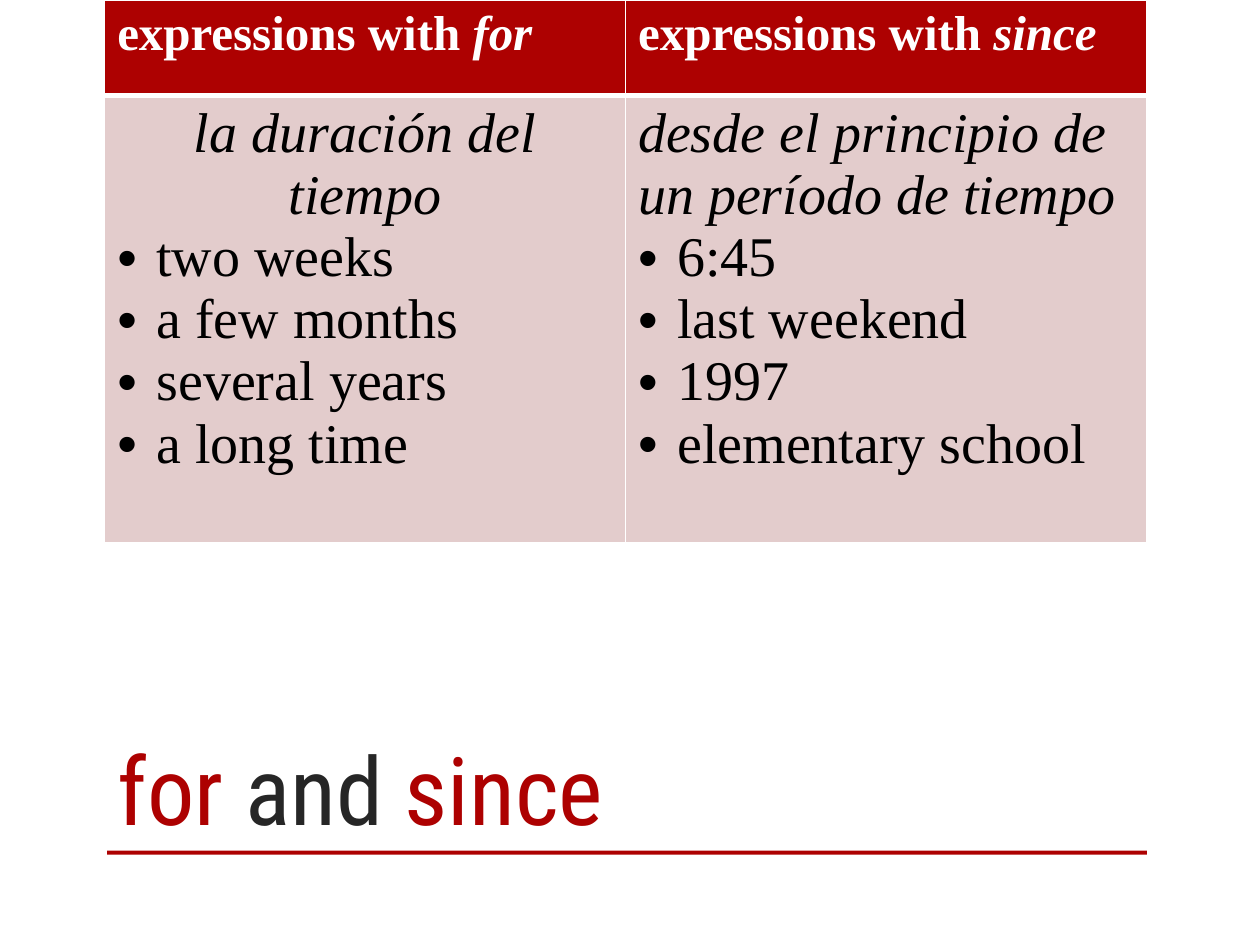
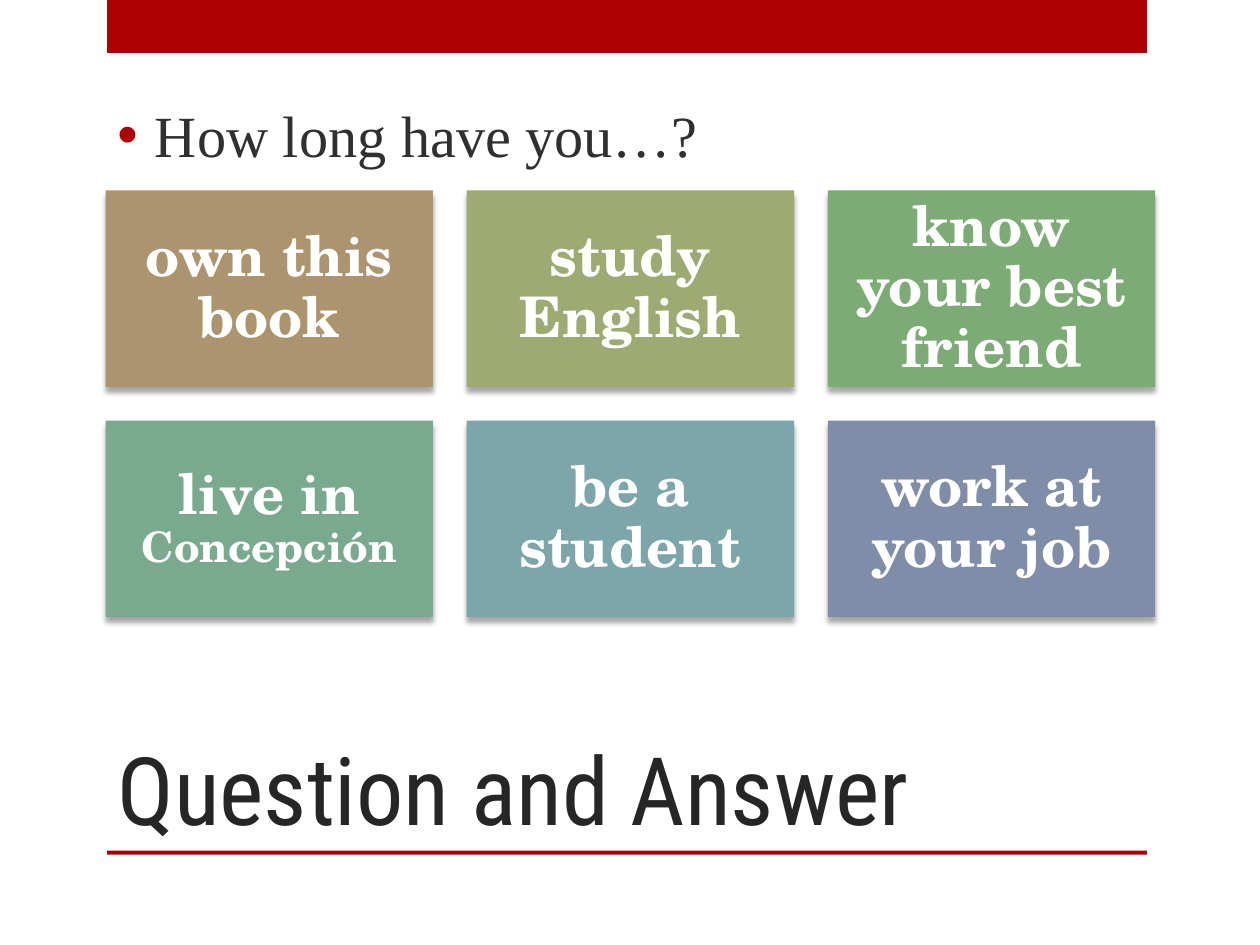
"""Builds two English grammar slides: a for/since table and a question card grid."""
from dataclasses import dataclass
from typing import Any, Optional

import pptx
import pptx.dml.color
import pptx.enum.shapes
import pptx.enum.text
import pptx.oxml
import pptx.oxml.ns
import pptx.util
from lxml import etree

Cm = pptx.util.Cm
Pt = pptx.util.Pt
qn = pptx.oxml.ns.qn
ALIGN = pptx.enum.text.PP_ALIGN
ANCHOR = pptx.enum.text.MSO_ANCHOR


@dataclass(frozen=True)
class Theme:
    accent: str = "AD0101"
    title: str = "262626"
    body: str = "303030"
    white: str = "FFFFFF"
    black: str = "000000"
    pale: str = "E3CCCC"
    title_font: str = "Roboto Condensed"
    body_font: str = "Times New Roman"
    card_font: str = "TeX Gyre Schola"
    title_size: float = 54
    header_size: float = 28
    cell_size: float = 32
    prompt_size: float = 33.3
    card_size: float = 32
    card_small: float = 24


T = Theme()


@dataclass(frozen=True)
class Box:
    x: float
    y: float
    w: float
    h: float

    def place(self) -> dict[str, int]:
        return dict(left=Cm(self.x), top=Cm(self.y), width=Cm(self.w), height=Cm(self.h))


@dataclass(frozen=True)
class Run:
    text: str
    color: Optional[str] = None
    size: Optional[float] = None
    italic: bool = False


@dataclass(frozen=True)
class Column:
    word: str
    meaning: str
    meaning_align: Any
    examples: tuple[str, ...]


@dataclass(frozen=True)
class Card:
    fill: str
    runs: tuple[Run, ...]


BANDS = (Box(2.16, 0, 20.96, 1.07), Box(2.16, 17.15, 20.96, 0.08))
TITLE = Box(2.11, 12.7, 18.85, 4.45)
PROMPT = Box(2.11, 1.9, 20.96, 1.63)
TABLE = Box(2.11, 0, 21, 10.95)
HEADER_H = 1.93
CARD = Box(2.13, 3.84, 6.6, 3.96)
CARD_GAP = 0.68
CARDS_PER_ROW = 3

COLUMNS = (
    Column("for", "la duración del tiempo", ALIGN.CENTER,
           ("two weeks", "a few months", "several years", "a long time")),
    Column("since", "desde el principio de un período de tiempo", ALIGN.LEFT,
           ("6:45", "last weekend", "1997", "elementary school")),
)
CARDS = (
    Card("AC956E", (Run("own this book"),)),
    Card("9DAB72", (Run("study English"),)),
    Card("7DAB75", (Run("know your best friend"),)),
    Card("79AA90", (Run("live in "), Run("Concepción", size=T.card_small))),
    Card("7CA6AA", (Run("be a student"),)),
    Card("808DA9", (Run("work at your job"),)),
)


def rgb(color: str) -> pptx.dml.color.RGBColor:
    """Turn a hex string into a colour."""
    return pptx.dml.color.RGBColor.from_string(color)


def apply(target: Any, values: dict[str, Any]) -> None:
    """Set every attribute named in the dict."""
    for name, value in values.items():
        setattr(target, name, value)


def write(p: Any, runs: tuple[Run, ...], font: str, size: float, color: str,
          bold: bool = False, align: Any = ALIGN.LEFT) -> None:
    """Fill a paragraph with formatted runs."""
    p.alignment = align
    for run in runs:
        r = p.add_run()
        r.text = run.text
        apply(r.font, dict(name=font, size=Pt(run.size or size), bold=bold, italic=run.italic))
        r.font.color.rgb = rgb(run.color or color)


def bullet(p: Any, indent: float, color: str) -> None:
    """Give a paragraph a hanging round bullet."""
    pPr = p._p.get_or_add_pPr()
    pPr.set("marL", str(Cm(indent)))
    pPr.set("indent", str(-Cm(indent)))
    clr = etree.SubElement(pPr, qn("a:buClr"))
    etree.SubElement(clr, qn("a:srgbClr"), val=color)
    etree.SubElement(pPr, qn("a:buFont"), typeface="Arial")
    etree.SubElement(pPr, qn("a:buChar"), char="•")


def rectangle(s: Any, box: Box, color: str) -> Any:
    """Draw a plain filled rectangle."""
    sp = s.shapes.add_shape(pptx.enum.shapes.MSO_SHAPE.RECTANGLE, **box.place())
    sp.shadow.inherit = False
    sp.fill.solid()
    sp.fill.fore_color.rgb = rgb(color)
    sp.line.fill.background()
    return sp


def placeholder(sp: Any, box: Box, anchor: Any) -> Any:
    """Move a placeholder and return its first paragraph."""
    apply(sp, box.place())
    apply(sp.text_frame, dict(word_wrap=True, vertical_anchor=anchor,
                              auto_size=pptx.enum.text.MSO_AUTO_SIZE.NONE))
    return sp.text_frame.paragraphs[0]


def new_slide(prs: Any, layout: int, title: tuple[Run, ...]) -> Any:
    """Add a slide with the shared bands and title."""
    s = prs.slides.add_slide(prs.slide_layouts[layout])
    for band in BANDS:
        rectangle(s, band, T.accent)
    p = placeholder(s.shapes.title, TITLE, ANCHOR.BOTTOM)
    write(p, title, T.title_font, T.title_size, T.title)
    return s


def style_cell(cell: Any, fill: str, top: float, bottom: float) -> None:
    """Set a cell's fill and white borders."""
    cell.fill.solid()
    cell.fill.fore_color.rgb = rgb(fill)
    tcPr = cell._tc.get_or_add_tcPr()
    for i, (side, width) in enumerate(dict(L=1, R=1, T=top, B=bottom).items()):
        ln = etree.Element(qn(f"a:ln{side}"), w=str(Pt(width)))
        solid = etree.SubElement(ln, qn("a:solidFill"))
        etree.SubElement(solid, qn("a:srgbClr"), val=T.white)
        tcPr.insert(i, ln)


def add_expressions(s: Any) -> None:
    """Draw the table of time expressions."""
    table = s.shapes.add_table(2, len(COLUMNS), **TABLE.place()).table
    table.horz_banding = False
    table.rows[0].height = Cm(HEADER_H)
    table.rows[1].height = Cm(TABLE.h - HEADER_H)
    for i, col in enumerate(COLUMNS):
        head, body = table.cell(0, i), table.cell(1, i)
        style_cell(head, T.accent, 1, 3)
        style_cell(body, T.pale, 3, 1)
        write(head.text_frame.paragraphs[0],
              (Run("expressions with "), Run(col.word, italic=True)),
              T.body_font, T.header_size, T.white, bold=True)
        tf = body.text_frame
        write(tf.paragraphs[0], (Run(col.meaning, italic=True),),
              T.body_font, T.cell_size, T.black, align=col.meaning_align)
        for example in col.examples:
            p = tf.add_paragraph()
            write(p, (Run(example),), T.body_font, T.cell_size, T.black)
            bullet(p, 0.79, T.black)


def add_card(s: Any, card: Card, box: Box) -> None:
    """Draw one shadowed card with centred text."""
    sp = rectangle(s, box, card.fill)
    effects = sp.element.spPr.find(qn("a:effectLst"))
    shadow = etree.SubElement(effects, qn("a:outerShdw"), blurRad=str(Pt(3)),
                              dist=str(Pt(3)), dir="5400000", rotWithShape="0")
    clr = etree.SubElement(shadow, qn("a:srgbClr"), val=T.black)
    etree.SubElement(clr, qn("a:alpha"), val="35000")
    tf = sp.text_frame
    apply(tf, dict(word_wrap=True, vertical_anchor=ANCHOR.MIDDLE))
    apply(tf, {f"margin_{side}": Cm(0.33) for side in ("left", "top", "right", "bottom")})
    p = tf.paragraphs[0]
    p.line_spacing = 0.9
    write(p, card.runs, T.card_font, T.card_size, T.white, bold=True, align=ALIGN.CENTER)


def add_cards(s: Any) -> None:
    """Lay the cards out in a grid."""
    for i, card in enumerate(CARDS):
        row, col = divmod(i, CARDS_PER_ROW)
        add_card(s, card, Box(CARD.x + col * (CARD.w + CARD_GAP),
                              CARD.y + row * (CARD.h + CARD_GAP), CARD.w, CARD.h))


def main() -> None:
    """Build and save the presentation."""
    prs = pptx.Presentation()
    apply(prs, dict(slide_width=Cm(25.4), slide_height=Cm(19.05)))

    s = new_slide(prs, 5, (Run("for", T.accent), Run(" and "), Run("since", T.accent)))
    add_expressions(s)

    s = new_slide(prs, 1, (Run("Question and Answer"),))
    p = placeholder(s.placeholders[1], PROMPT, ANCHOR.MIDDLE)
    write(p, (Run("How long have you…?"),), T.body_font, T.prompt_size, T.body)
    bullet(p, 0.76, T.accent)
    add_cards(s)

    prs.save("out.pptx")


if __name__ == "__main__":
    main()
